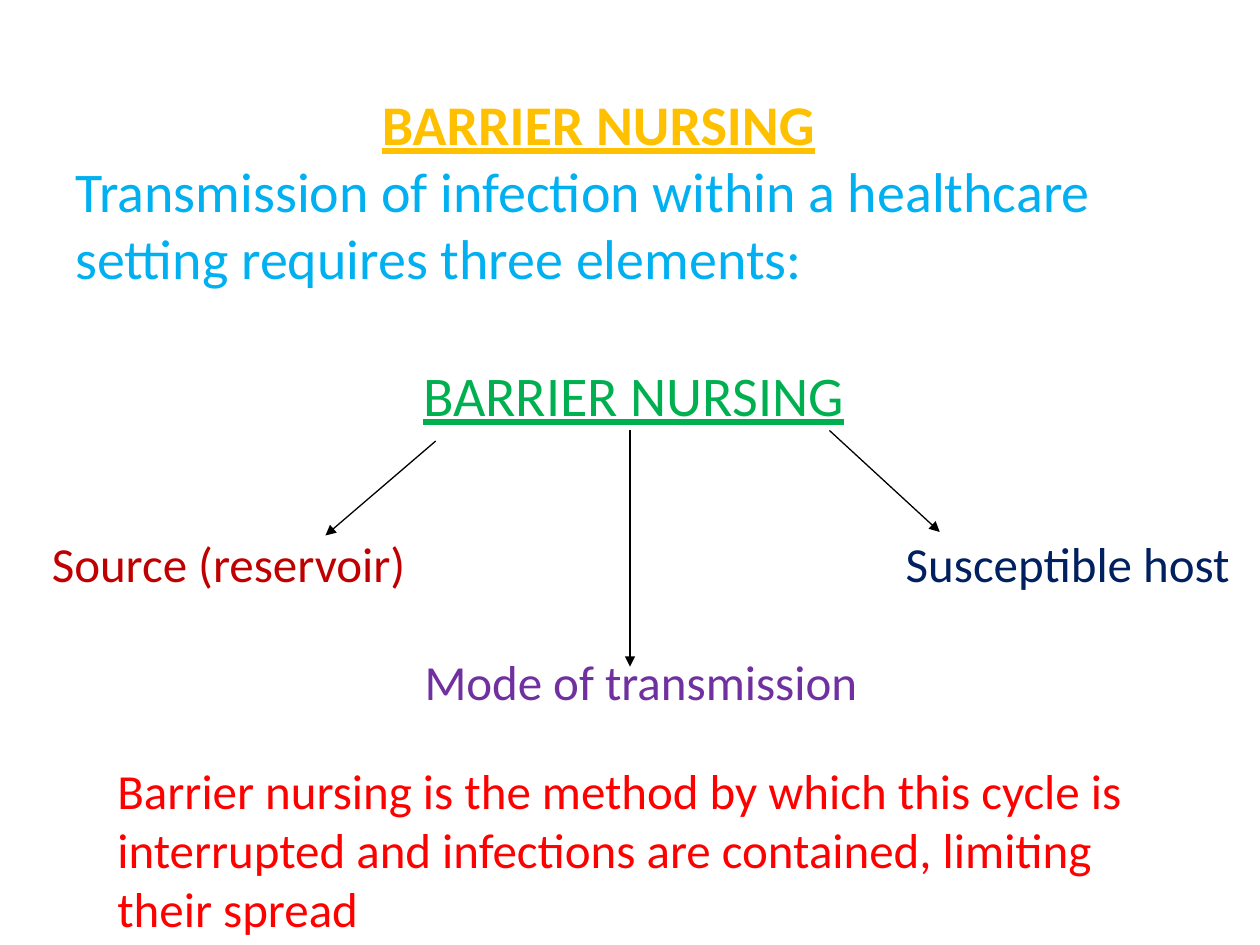
from typing import NamedTuple

from lxml import etree
from pptx import Presentation
from pptx.dml.color import RGBColor
from pptx.enum.shapes import MSO_CONNECTOR
from pptx.enum.text import MSO_ANCHOR, PP_ALIGN
from pptx.oxml.ns import qn
from pptx.util import Pt

STRAIGHT = MSO_CONNECTOR.STRAIGHT
TOP = MSO_ANCHOR.TOP
LEFT, CENTER = PP_ALIGN.LEFT, PP_ALIGN.CENTER

BLACK = RGBColor(0x00, 0x00, 0x00)
GOLD = RGBColor(0xFF, 0xC0, 0x00)
SKY = RGBColor(0x00, 0xB0, 0xF0)
GREEN = RGBColor(0x00, 0xB0, 0x50)
DARK_RED = RGBColor(0xC0, 0x00, 0x00)
NAVY = RGBColor(0x00, 0x20, 0x60)
PURPLE = RGBColor(0x70, 0x30, 0xA0)
RED = RGBColor(0xFF, 0x00, 0x00)

FONT = "Calibri"
HEADING_SIZE, BODY_SIZE = 32, 28


class Line(NamedTuple):
    text: str
    color: RGBColor
    size: float = BODY_SIZE
    bold: bool = False
    underline: bool = False
    align: PP_ALIGN = LEFT


class TextBlock(NamedTuple):
    left: float
    top: float
    width: float
    height: float
    lines: tuple[Line, ...]
    wrap: bool = False


class Arrow(NamedTuple):
    start: tuple[float, float]
    end: tuple[float, float]


TEXT_BLOCKS = (
    # Title and introduction
    TextBlock(36, 47.5, 612, 145, (
        Line("BARRIER NURSING", GOLD, HEADING_SIZE, True, True, CENTER),
        Line("Transmission of infection within a healthcare setting requires "
             "three elements:", SKY, HEADING_SIZE),
    ), wrap=True),
    # Diagram root and its three elements
    TextBlock(234.7, 202.3, 270, 46.3, (
        Line("BARRIER NURSING", GREEN, HEADING_SIZE, underline=True),
    )),
    TextBlock(22.5, 301.5, 240, 41.4, (Line("Source (reservoir)", DARK_RED),)),
    TextBlock(235.5, 369, 290, 41.4, (Line("Mode of transmission", PURPLE),)),
    TextBlock(510.5, 301.5, 205, 41.4, (Line("Susceptible host", NAVY),)),
    # Conclusion
    TextBlock(60, 431.3, 612, 108.7, (
        Line("Barrier nursing is the method by which this cycle is interrupted "
             "and infections are contained, limiting their spread", RED),
    ), wrap=True),
)

ARROWS = (
    Arrow((249, 252), (186, 306)),
    Arrow((360, 246), (360, 381)),
    Arrow((474, 246), (537, 304)),
)


def add_text_block(slide, block: TextBlock) -> None:
    shape = slide.shapes.add_textbox(
        Pt(block.left), Pt(block.top), Pt(block.width), Pt(block.height))
    text_frame = shape.text_frame
    text_frame.word_wrap = block.wrap
    text_frame.vertical_anchor = TOP
    text_frame.text = "\n".join(line.text for line in block.lines)
    for paragraph, line in zip(text_frame.paragraphs, block.lines):
        paragraph.alignment = line.align
        font = paragraph.runs[0].font
        font.name = FONT
        font.size = Pt(line.size)
        font.bold = line.bold
        font.underline = line.underline
        font.color.rgb = line.color


def add_arrow(slide, arrow: Arrow) -> None:
    points = [Pt(value) for value in (*arrow.start, *arrow.end)]
    connector = slide.shapes.add_connector(STRAIGHT, *points)
    connector.line.color.rgb = BLACK
    connector.line.width = Pt(0.75)
    properties = connector.element.spPr
    etree.SubElement(properties.find(qn("a:ln")), qn("a:tailEnd"), type="triangle")
    etree.SubElement(properties, qn("a:effectLst"))


def main() -> None:
    presentation = Presentation()
    presentation.slide_width = Pt(720)
    presentation.slide_height = Pt(540)
    slide = presentation.slides.add_slide(presentation.slide_layouts[6])

    for arrow in ARROWS:
        add_arrow(slide, arrow)
    for block in TEXT_BLOCKS:
        add_text_block(slide, block)

    presentation.save("out.pptx")


if __name__ == "__main__":
    main()
